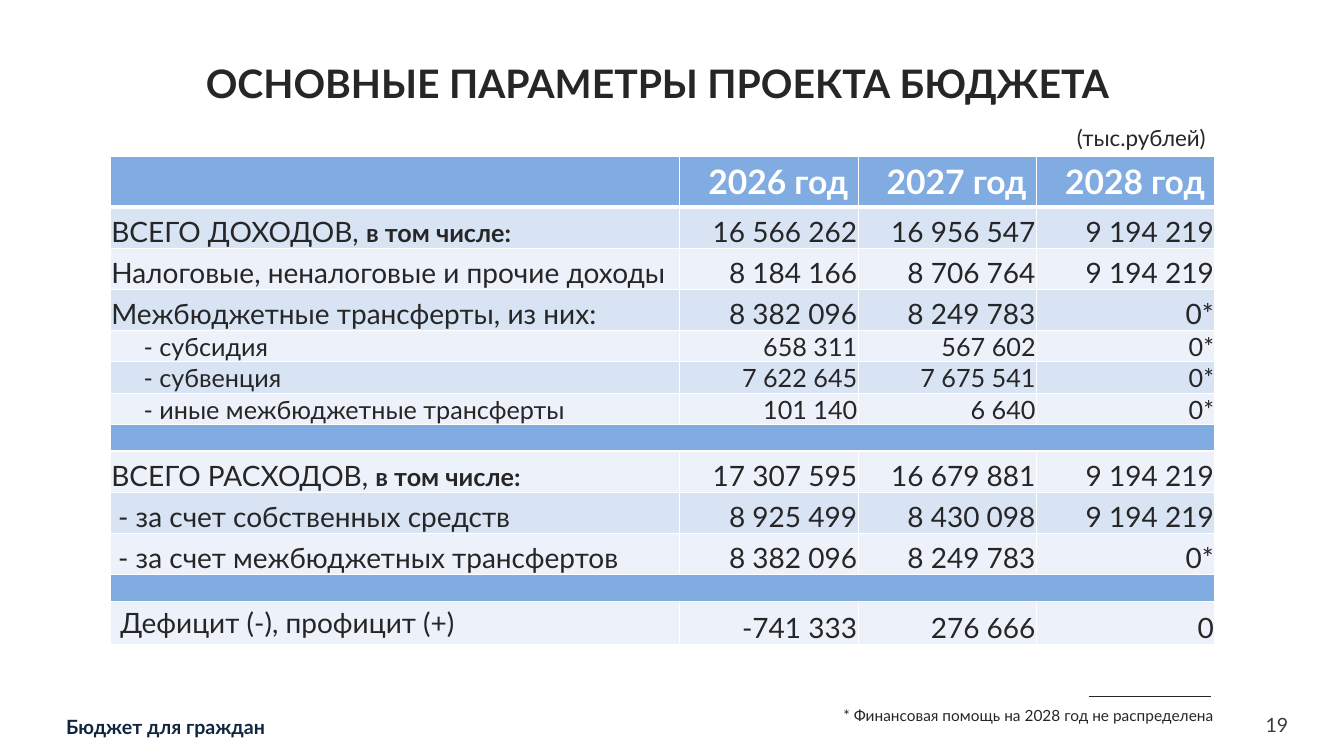
import pptx
import pptx.util
import pptx.dml.color
import pptx.enum.shapes
import pptx.enum.text
import pptx.oxml
import pptx.oxml.ns

Pt = pptx.util.Pt
ALIGN = pptx.enum.text.PP_ALIGN
ANCHOR = pptx.enum.text.MSO_ANCHOR

FONT = "Lato"
COLORS = {
    "text": "262626", "white": "FFFFFF", "header": "81ACE2", "odd": "D8E3F4",
    "even": "EDF1FA", "footer": "10253F", "number": "3C3C3C",
}
TEXTS = [
    ("ОСНОВНЫЕ ПАРАМЕТРЫ ПРОЕКТА БЮДЖЕТА", (41.8, 31.7, 855.4, 54.7), 28, True, "text", ALIGN.CENTER, ANCHOR.MIDDLE, True),
    ("(тыс.рублей)", (750.2, 85, 118.1, 26.6), 16, False, "text", ALIGN.RIGHT, ANCHOR.TOP, True),
    ("* Финансовая помощь на 2028 год не распределена", (589.7, 501.1, 284.4, 23.8), 11, False, "text", ALIGN.RIGHT, ANCHOR.TOP, True),
    ("Бюджет для граждан", (47.2, 510.5, 400, 17.3), 14, True, "footer", ALIGN.LEFT, ANCHOR.TOP, False),
    ("19", (902.2, 509, 18, 17.3), 14, False, "number", ALIGN.RIGHT, ANCHOR.MIDDLE, False),
]
HEADER = ("", "2026 год", "2027 год", "2028 год")
ROWS = [
    ("total", "ВСЕГО ДОХОДОВ, ", "16 566 262", "16 956 547", "9 194 219"),
    ("main", "Налоговые, неналоговые и прочие доходы", "8 184 166", "8 706 764", "9 194 219"),
    ("main", "Межбюджетные трансферты, из них:", "8 382 096", "8 249 783", "0*"),
    ("detail", "- субсидия", "658 311", "567 602", "0*"),
    ("detail", "- субвенция", "7 622 645", "7 675 541", "0*"),
    ("detail", "- иные межбюджетные трансферты", "101 140", "6 640", "0*"),
    ("band",),
    ("total", "ВСЕГО РАСХОДОВ, ", "17 307 595", "16 679 881", "9 194 219"),
    ("source", "- за счет собственных средств", "8 925 499", "8 430 098", "9 194 219"),
    ("source", "- за счет межбюджетных трансфертов", "8 382 096", "8 249 783", "0*"),
    ("band",),
    ("balance", "Дефицит (-), профицит (+)", "-741 333", "276 666", "0"),
]
TOTAL_NOTE = "в том числе:"
STYLES = {
    "header": (36, 24, 7.2),
    "total": (29.4, 20, 0.7),
    "main": (29.4, 20, 0.7),
    "detail": (22.4, 18, 23.8),
    "source": (29.4, 20, 5.6),
    "band": (19, 10, 0.7),
    "balance": (31.2, 20, 7.2),
}
COLUMNS = (406.8, 127.4, 127.4, 127.4)
TABLE_LEFT, TABLE_TOP = 78.8, 111.8


def rgb(name):
    return pptx.dml.color.RGBColor.from_string(COLORS[name])


def set_font(font, size, color, bold=False):
    font.name, font.size, font.bold = FONT, Pt(size), bold
    font.color.rgb = rgb(color)


def add_text(s, text, box, size, bold, color, align, anchor, inset):
    tf = s.shapes.add_textbox(*map(Pt, box)).text_frame
    tf.word_wrap = True
    tf.vertical_anchor = anchor
    if not inset:
        tf.margin_left = tf.margin_top = tf.margin_right = tf.margin_bottom = 0
    p = tf.paragraphs[0]
    p.text, p.alignment = text, align
    set_font(p.font, size, color, bold)


def set_borders(cell, row):
    tcPr = cell._tc.get_or_add_tcPr()
    for side in "LRTB":
        thick = (row, side) in ((0, "B"), (1, "T"))
        tcPr.append(pptx.oxml.parse_xml(
            f'<a:ln{side} {pptx.oxml.ns.nsdecls("a")} w="{Pt(3 if thick else 1)}"><a:solidFill>'
            f'<a:srgbClr val="{COLORS["white"]}"/></a:solidFill></a:ln{side}>'))


def fill_cell(cell, row, col, kind, text):
    height, size, left = STYLES[kind]
    header = kind == "header"
    set_borders(cell, row)
    cell.fill.solid()
    cell.fill.fore_color.rgb = rgb("header" if header or kind == "band" else "odd" if row % 2 else "even")
    if not header and (kind, col) != ("balance", 0):
        cell.vertical_anchor = ANCHOR.BOTTOM
        cell.margin_left = Pt(0.7 if col else left)
        cell.margin_top = cell.margin_right = Pt(0.7)
        cell.margin_bottom = 0
    p = cell.text_frame.paragraphs[0]
    p.alignment = ALIGN.RIGHT if col else ALIGN.LEFT
    if kind == "total" and col == 0:
        for part, part_size, bold in ((text, size, False), (TOTAL_NOTE, 18, True)):
            r = p.add_run()
            r.text = part
            set_font(r.font, part_size, "text", bold)
    else:
        p.text = text
        set_font(p.font, size, "white" if header else "text", header)


def add_budget_table(s):
    rows = [("header", *HEADER), *ROWS]
    heights = [STYLES[row[0]][0] for row in rows]
    table = s.shapes.add_table(len(rows), len(COLUMNS), Pt(TABLE_LEFT), Pt(TABLE_TOP),
                               Pt(sum(COLUMNS)), Pt(sum(heights))).table
    table.horz_banding = False
    for column, width in zip(table.columns, COLUMNS):
        column.width = Pt(width)
    for i, (kind, *texts) in enumerate(rows):
        table.rows[i].height = Pt(heights[i])
        for j, text in enumerate(texts or [""] * len(COLUMNS)):
            fill_cell(table.cell(i, j), i, j, kind, text)
        if kind == "band":
            table.cell(i, 0).merge(table.cell(i, len(COLUMNS) - 1))


def add_footnote_rule(s):
    rule = s.shapes.add_connector(pptx.enum.shapes.MSO_CONNECTOR.STRAIGHT,
                                  Pt(777.6), Pt(497.5), Pt(864.7), Pt(497.5))
    rule.line.color.rgb = rgb("text")
    rule.line.width = Pt(0.5)
    rule._element.spPr.append(pptx.oxml.parse_xml(f'<a:effectLst {pptx.oxml.ns.nsdecls("a")}/>'))


def main():
    prs = pptx.Presentation()
    prs.slide_width, prs.slide_height = Pt(960), Pt(540)
    s = prs.slides.add_slide(prs.slide_layouts[6])
    for item in TEXTS:
        add_text(s, *item)
    add_footnote_rule(s)
    add_budget_table(s)
    prs.save("out.pptx")


if __name__ == "__main__":
    main()
